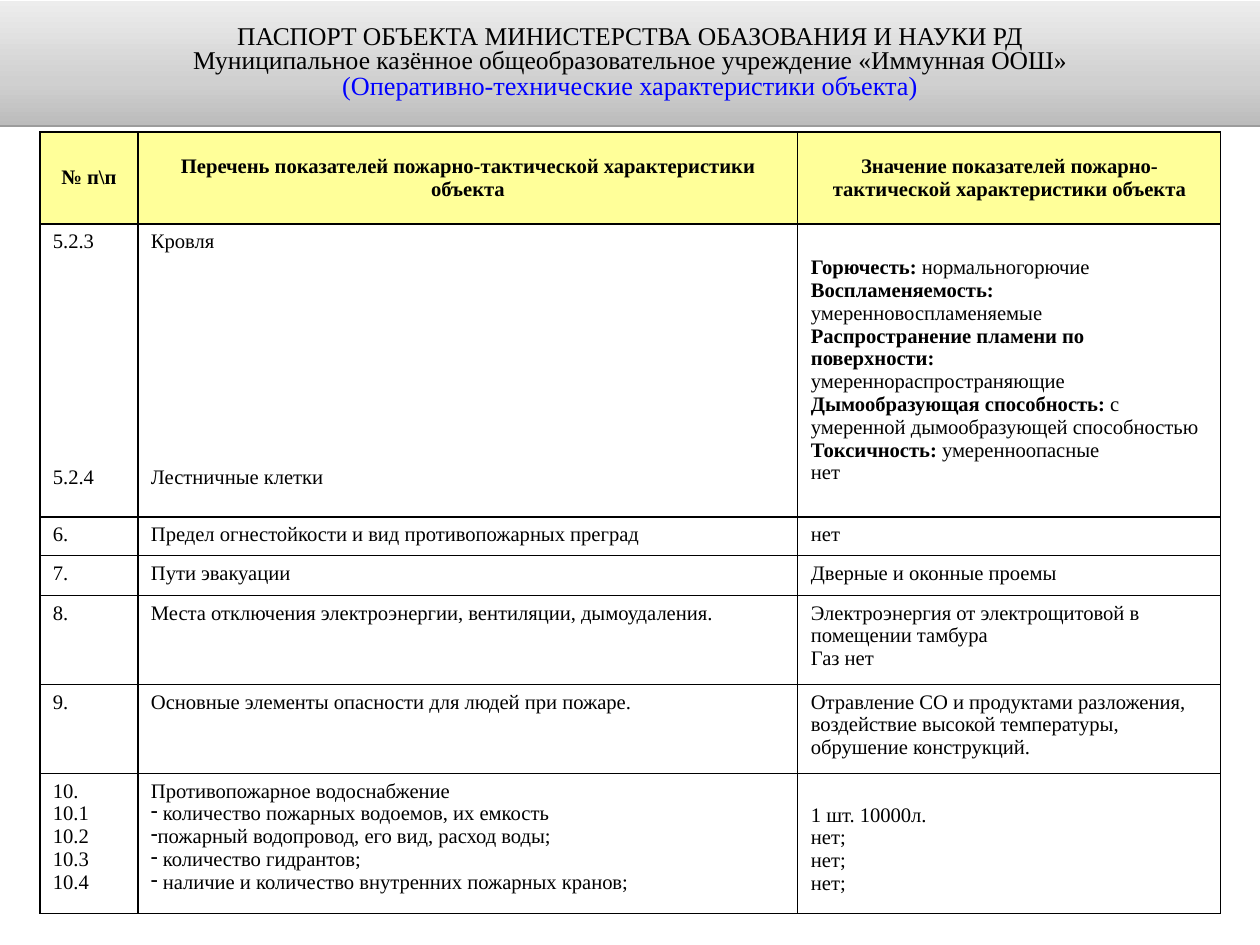
import copy
from dataclasses import dataclass
from typing import Optional

import lxml.etree
import pptx
import pptx.dml.color
import pptx.enum.shapes
import pptx.enum.text
import pptx.oxml.ns
import pptx.util

SCALE = 10160
Align = pptx.enum.text.PP_ALIGN
Anchor = pptx.enum.text.MSO_ANCHOR
qn = pptx.oxml.ns.qn


@dataclass(frozen=True)
class Theme:
    font: str = "Times New Roman"
    ink: str = "000000"
    blue: str = "0000FF"
    head: str = "FFFF99"
    paper: str = "FFFFFF"
    fade: tuple = ((0, "BCBCBC"), (0.35, "D0D0D0"), (1, "EDEDED"))
    body: float = 16.5
    title: float = 20.4
    note: float = 21
    line: float = 19


THEME = Theme()


@dataclass(frozen=True)
class Para:
    text: str
    lead: str = ""
    gap: int = 0
    dash: bool = False


@dataclass(frozen=True)
class Cell:
    paras: tuple
    skip: int = 0
    mid: bool = False
    head: bool = False


@dataclass(frozen=True)
class Row:
    high: int
    cells: tuple


def px(size: int) -> pptx.util.Emu:
    return pptx.util.Emu(size * SCALE)


def rgb(code: str) -> pptx.dml.color.RGBColor:
    return pptx.dml.color.RGBColor.from_string(code)


def write(para, text: str, *, size: float = THEME.body, bold: bool = False,
          color: str = THEME.ink, align=Align.LEFT, space: Optional[float] = None) -> None:
    para.alignment = align
    if space:
        para.line_spacing = space
    run = para.add_run()
    run.text = text
    run.font.name = THEME.font
    run.font.size = pptx.util.Pt(size)
    run.font.bold = bold
    run.font.color.rgb = rgb(color)


def inset(box, side: int, top: int, base: int) -> None:
    box.margin_left = box.margin_right = px(side)
    box.margin_top, box.margin_bottom = px(top), px(base)


def next_para(frame, index: int):
    return frame.add_paragraph() if index else frame.paragraphs[0]


def border(cell) -> None:
    props = cell._tc.get_or_add_tcPr()
    for side in ("a:lnL", "a:lnR", "a:lnT", "a:lnB"):
        line = lxml.etree.SubElement(props, qn(side), w="12700")
        fill = lxml.etree.SubElement(line, qn("a:solidFill"))
        lxml.etree.SubElement(fill, qn("a:srgbClr"), val=THEME.ink)


def draw_cell(cell, data: Cell) -> None:
    border(cell)
    cell.fill.solid()
    cell.fill.fore_color.rgb = rgb(THEME.head if data.head else THEME.paper)
    cell.vertical_anchor = Anchor.MIDDLE if data.mid else Anchor.TOP
    inset(cell, 13, 6 + 24 * data.skip, 6)
    align = Align.CENTER if data.head else Align.LEFT
    for index, item in enumerate(data.paras):
        para = next_para(cell.text_frame, index)
        if item.gap:
            para.space_before = pptx.util.Pt(item.gap * THEME.line)
        if item.lead:
            write(para, item.lead, bold=True)
        if item.text:
            write(para, item.text, bold=data.head, align=align)
        if item.dash:
            props = para._p.get_or_add_pPr()
            props.set("marL", "0")
            props.set("indent", "0")
            lxml.etree.SubElement(props, qn("a:buChar"), char="-")


def draw_table(slide, left: int, top: int, wide: tuple, rows: tuple) -> None:
    high = sum(row.high for row in rows)
    table = slide.shapes.add_table(
        len(rows), len(wide), px(left), px(top), px(sum(wide)), px(high)).table
    for index, width in enumerate(wide):
        table.columns[index].width = px(width)
    for down, row in enumerate(rows):
        table.rows[down].height = px(row.high)
        for across, data in enumerate(row.cells):
            draw_cell(table.cell(down, across), data)


def draw_banner(slide, lines: tuple) -> None:
    kind = pptx.enum.shapes.MSO_SHAPE.RECTANGLE
    shape = slide.shapes.add_shape(kind, px(0), px(1), px(1260), px(124))
    shape.fill.gradient()
    shape.fill.gradient_angle = 90
    stops = shape._element.spPr.find(qn("a:gradFill")).find(qn("a:gsLst"))
    stops.append(copy.deepcopy(stops[0]))
    for stop, (place, code) in zip(shape.fill.gradient_stops, THEME.fade):
        stop.position = place
        stop.color.rgb = rgb(code)
    shape.line.fill.background()
    shape.shadow.inherit = False
    effect = shape._element.spPr.find(qn("a:effectLst"))
    shade = lxml.etree.SubElement(effect, qn("a:outerShdw"), blurRad="0",
                                  dist="20320", dir="5400000", rotWithShape="0")
    tint = lxml.etree.SubElement(shade, qn("a:srgbClr"), val=THEME.ink)
    lxml.etree.SubElement(tint, qn("a:alpha"), val="38000")
    frame = shape.text_frame
    frame.word_wrap = True
    frame.vertical_anchor = Anchor.MIDDLE
    inset(frame, 11, 5, 5)
    for index, (text, size, color) in enumerate(lines):
        write(next_para(frame, index), text, size=size, color=color,
              align=Align.CENTER, space=0.8)


def plain(*texts: str, **style) -> Cell:
    return Cell(tuple(Para(text) for text in texts), **style)


def spread(first: str, last: str) -> Cell:
    return Cell((Para(first), Para(last, gap=9)))


TITLE = (
    ("ПАСПОРТ ОБЪЕКТА МИНИСТЕРСТВА ОБАЗОВАНИЯ И НАУКИ РД", THEME.title, THEME.ink),
    ("Муниципальное казённое общеобразовательное учреждение «Иммунная ООШ»",
     THEME.title, THEME.ink),
    ("(Оперативно-технические характеристики объекта)", THEME.note, THEME.blue),
)
HEADS = ("№ п\\п", "Перечень показателей пожарно-тактической характеристики объекта",
         "Значение показателей пожарно-тактической характеристики объекта")
ROOF = Cell((
    Para("нормальногорючие", "Горючесть: "),
    Para("умеренновоспламеняемые", "Воспламеняемость: "),
    Para("", "Распространение пламени по поверхности:"),
    Para("умереннораспространяющие"),
    Para("с умеренной дымообразующей способностью", "Дымообразующая способность: "),
    Para("умеренноопасные", "Токсичность: "),
    Para("нет"),
), mid=True)
WATER = Cell((
    Para("Противопожарное водоснабжение"),
    Para(" количество пожарных водоемов, их емкость", dash=True),
    Para("пожарный водопровод, его вид, расход воды;", dash=True),
    Para(" количество гидрантов;", dash=True),
    Para(" наличие и количество внутренних пожарных кранов;", dash=True),
))
ROWS = (
    Row(92, tuple(plain(text, mid=True, head=True) for text in HEADS)),
    Row(293, (spread("5.2.3", "5.2.4"), spread("Кровля", "Лестничные клетки"), ROOF)),
    Row(39, (plain("6."), plain("Предел огнестойкости и вид противопожарных преград"),
             plain("нет"))),
    Row(40, (plain("7."), plain("Пути эвакуации"), plain("Дверные и оконные проемы"))),
    Row(89, (plain("8."),
             plain("Места отключения электроэнергии, вентиляции, дымоудаления."),
             plain("Электроэнергия от электрощитовой в помещении тамбура", "Газ нет"))),
    Row(89, (plain("9."), plain("Основные элементы опасности для людей при пожаре."),
             plain("Отравление СО и продуктами разложения, воздействие высокой "
                   "температуры, обрушение конструкций."))),
    Row(140, (plain("10.", "10.1", "10.2", "10.3", "10.4"), WATER,
              plain("1 шт. 10000л.", "нет;", "нет;", "нет;", skip=1))),
)


def main() -> None:
    deck = pptx.Presentation()
    deck.slide_width, deck.slide_height = px(1260), px(945)
    slide = deck.slides.add_slide(deck.slide_layouts[6])
    draw_table(slide, 40, 132, (98, 660, 423), ROWS)
    draw_banner(slide, TITLE)
    deck.save("out.pptx")


if __name__ == "__main__":
    main()
